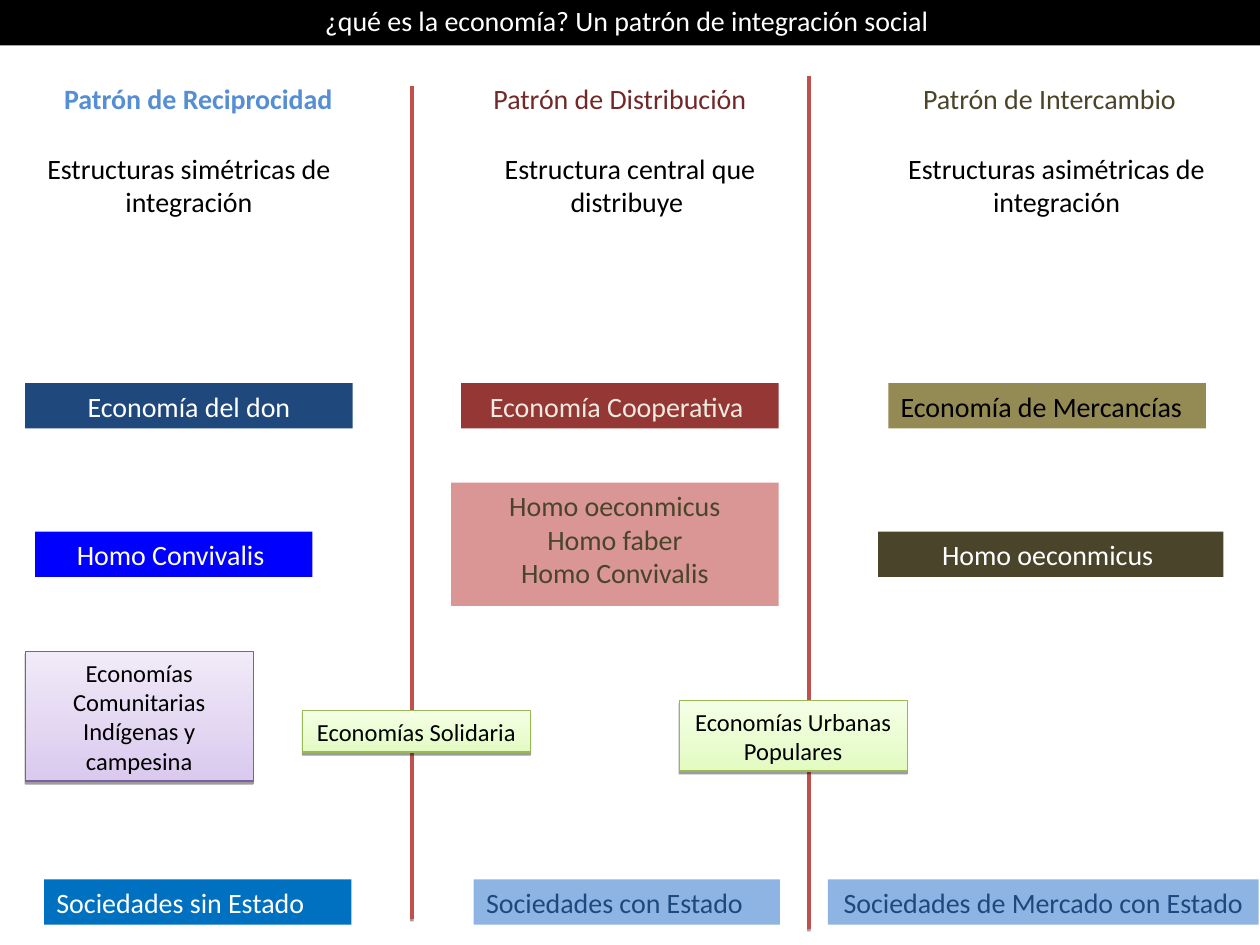
import pptx
import pptx.util
import pptx.dml.color
import pptx.enum.shapes
import pptx.enum.text
from lxml import etree
from pptx.oxml.ns import qn

IN = pptx.util.Inches
RGB = pptx.dml.color.RGBColor.from_string
ALIGN = pptx.enum.text.PP_ALIGN
ANCHOR = pptx.enum.text.MSO_ANCHOR
KIND = pptx.enum.shapes.MSO_SHAPE
WIDE, HIGH = 10, 7.5

THEME = dict(
    font="Calibri", size=16, small=14, black="000000", white="FFFFFF",
    blue="1F497D", sky="8EB4E3", olive="4A452A", rule="C0504D",
    lilac=("F1EAF8", "D9CAEE", "7D5FA0"), lime=("F4FFE6", "E3FBC2", "98B855"),
)
BLACK, WHITE, BLUE, SKY, OLIVE = (
    THEME[key] for key in ("black", "white", "blue", "sky", "olive"))

# Content
TITLE = "¿qué es la economía? Un patrón de integración social "

# Columns start at the left edge and at the two rules
COLS = (0, 3.27, 6.42)
RULES = ((COLS[1], 0.68, 7.29), (COLS[2], 0.6, 7.37))

# Rows: top and height
ROWS = dict(head=(0.6, 0.36), form=(1.15, 0.63), econ=(3.04, 0.36),
            homo=(4.22, 0.36), trio=(3.83, 0.98), state=(6.98, 0.36))

# Row, column, indent in column, width, text, fill, ink, extra format
CELLS = [
    ("head", 0, 0.04, 3.07, "Patrón de Reciprocidad", WHITE, "558ED5", {"bold": True}),
    ("head", 1, 0.39, 2.52, "Patrón de Distribución", WHITE, "702928", {}),
    ("head", 2, 0.59, 2.64, "Patrón de Intercambio", WHITE, OLIVE, {}),
    ("form", 0, 0.12, 2.76, "Estructuras simétricas de integración", None, BLACK, {}),
    ("form", 1, 0.47, 2.52, "Estructura central que distribuye ", None, BLACK, {}),
    ("form", 2, 0.47, 2.99, "Estructuras asimétricas de integración", None, BLACK, {}),
    ("econ", 0, 0.2, 2.6, "Economía del don", BLUE, WHITE, {}),
    ("econ", 1, 0.39, 2.52, "Economía Cooperativa ", "953735", "EEECE1", {}),
    ("econ", 2, 0.63, 2.52, "Economía de Mercancías ", "948A54", BLACK,
     {"align": ALIGN.JUSTIFY}),
    ("homo", 0, 0.28, 2.2, "Homo Convivalis ", "0000FF", WHITE, {}),
    ("trio", 1, 0.31, 2.6, "Homo oeconmicus\nHomo faber\nHomo Convivalis",
     "D99694", OLIVE, {}),
    ("homo", 2, 0.55, 2.74, "Homo oeconmicus ", OLIVE, WHITE, {}),
    ("state", 0, 0.35, 2.44, "Sociedades sin Estado", "0070C0", WHITE,
     {"align": ALIGN.LEFT}),
    ("state", 1, 0.49, 2.43, "Sociedades con Estado", SKY, BLUE,
     {"align": ALIGN.LEFT}),
    ("state", 2, 0.15, 3.42, "Sociedades de Mercado con Estado", SKY, BLUE, {}),
]

# Cards: left, top, height, text, tint
CARD = 1.81
CARDS = [
    (0.2, 5.17, 1.03, "Economías Comunitarias Indígenas y campesina", "lilac"),
    (2.4, 5.64, 0.33, "Economías Solidaria ", "lime"),
    (5.39, 5.56, 0.56, "Economías Urbanas Populares", "lime"),
]


def assign(item, vals):
    for key, val in vals.items():
        setattr(item, key, val)


def write(shape, text, ink, size=THEME["size"], align=ALIGN.CENTER,
          bold=False, anchor=ANCHOR.TOP):
    frame = shape.text_frame
    frame.text = text
    assign(frame, dict(
        word_wrap=True, auto_size=pptx.enum.text.MSO_AUTO_SIZE.NONE,
        vertical_anchor=anchor, margin_left=IN(0.1), margin_right=IN(0.1),
        margin_top=IN(0.05), margin_bottom=IN(0.05)))
    for para in frame.paragraphs:
        para.alignment = align
        for run in para.runs:
            assign(run.font, dict(name=THEME["font"], size=pptx.util.Pt(size),
                                  bold=bold))
            run.font.color.rgb = RGB(ink)


def paint(shape, fill):
    shape.fill.solid()
    shape.fill.fore_color.rgb = RGB(fill)
    shape.line.fill.background()


def shade(list_):
    drop = etree.SubElement(list_, qn("a:outerShdw"), blurRad="0",
                            dist=str(pptx.util.Pt(1.6)), dir="5400000",
                            rotWithShape="0")
    tone = etree.SubElement(drop, qn("a:srgbClr"), val=BLACK)
    etree.SubElement(tone, qn("a:alpha"), val="38000")


def block(slide, *box):
    shape = slide.shapes.add_shape(KIND.RECTANGLE, *map(IN, box))
    shape.shadow.inherit = False
    return shape


def main():
    deck = pptx.Presentation()
    assign(deck, dict(slide_width=IN(WIDE), slide_height=IN(HIGH)))
    slide = deck.slides.add_slide(deck.slide_layouts[5])

    # Title bar
    title = slide.shapes.title
    assign(title, dict(left=0, top=IN(-0.03), width=IN(WIDE), height=IN(0.39)))
    paint(title, BLACK)
    write(title, TITLE, WHITE, anchor=ANCHOR.MIDDLE)

    # Rules between columns
    for x, top, end in RULES:
        rule = slide.shapes.add_connector(
            pptx.enum.shapes.MSO_CONNECTOR.STRAIGHT,
            IN(x), IN(top), IN(x), IN(end))
        rule.line.color.rgb = RGB(THEME["rule"])
        rule.line.width = pptx.util.Pt(2)
        props = rule.element.find(qn("p:spPr"))
        shade(etree.SubElement(props, qn("a:effectLst")))

    # Column cells
    for row, col, dent, wide, text, fill, ink, form in CELLS:
        top, high = ROWS[row]
        box = (COLS[col] + dent, top, wide, high)
        if fill:
            shape = block(slide, *box)
            paint(shape, fill)
        else:
            shape = slide.shapes.add_textbox(*map(IN, box))
        write(shape, text, ink, **form)

    # Cards across the columns
    for left, top, high, text, tint in CARDS:
        card = block(slide, left, top, CARD, high)
        *tones, edge = THEME[tint]
        card.fill.gradient()
        card.fill.gradient_angle = 270
        for stop, tone in zip(card.fill.gradient_stops, tones):
            stop.color.rgb = RGB(tone)
        card.line.color.rgb = RGB(edge)
        card.line.width = pptx.util.Pt(0.75)
        shade(card.element.spPr.find(qn("a:effectLst")))
        write(card, text, BLACK, THEME["small"])

    deck.save("out.pptx")


if __name__ == "__main__":
    main()
